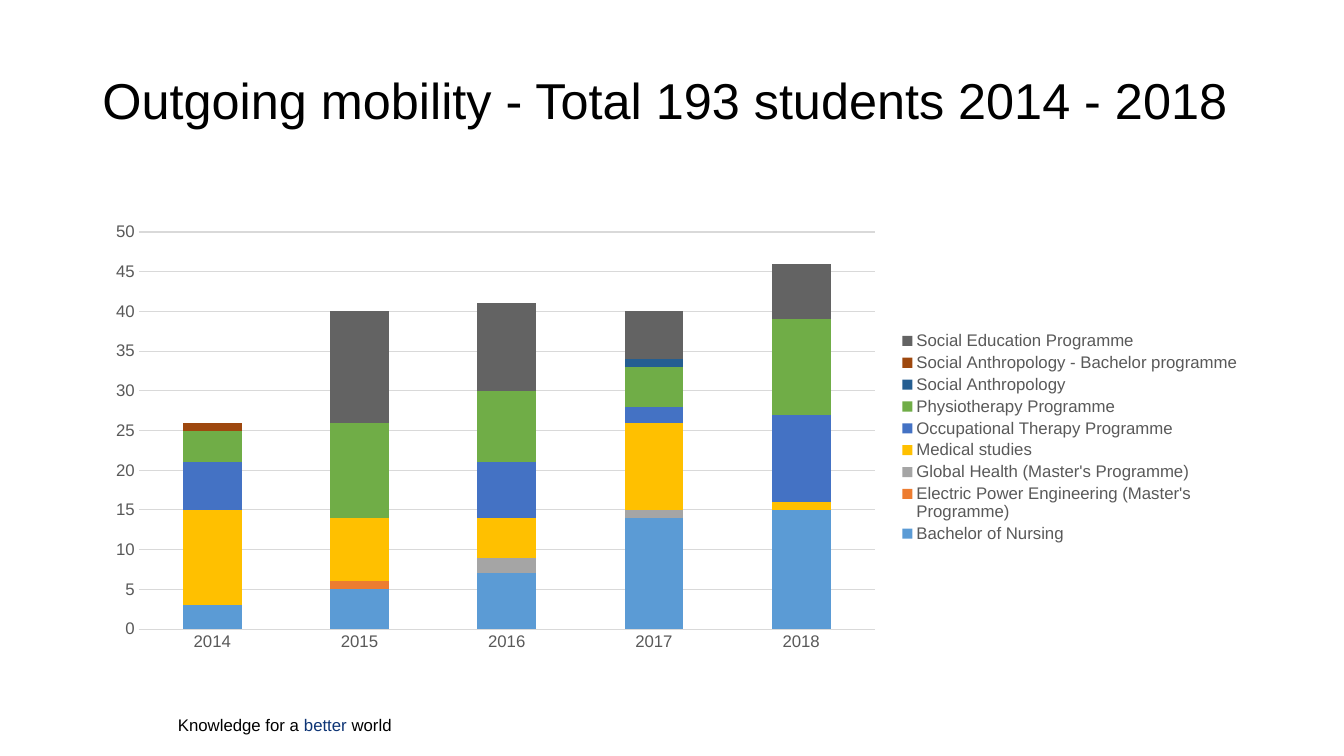
from lxml.etree import SubElement
from pptx import Presentation
from pptx.chart.data import CategoryChartData
from pptx.dml.color import RGBColor
from pptx.enum.chart import XL_CHART_TYPE, XL_LEGEND_POSITION, XL_TICK_MARK
from pptx.enum.text import MSO_ANCHOR, PP_ALIGN
from pptx.oxml.ns import qn
from pptx.util import Pt

BLACK = RGBColor(0x00, 0x00, 0x00)
NAVY = RGBColor(0x0D, 0x34, 0x75)
GREY_TEXT = RGBColor(0x59, 0x59, 0x59)
GREY_LINE = RGBColor(0xD9, 0xD9, 0xD9)
BLUE = RGBColor(0x5B, 0x9B, 0xD5)
ORANGE = RGBColor(0xED, 0x7D, 0x31)
GREY = RGBColor(0xA5, 0xA5, 0xA5)
GOLD = RGBColor(0xFF, 0xC0, 0x00)
INDIGO = RGBColor(0x44, 0x72, 0xC4)
GREEN = RGBColor(0x70, 0xAD, 0x47)
DARK_BLUE = RGBColor(0x25, 0x5E, 0x91)
BROWN = RGBColor(0x9E, 0x48, 0x0E)
DARK_GREY = RGBColor(0x63, 0x63, 0x63)

YEARS = ["2014", "2015", "2016", "2017", "2018"]
PROGRAMMES = [
    ("Bachelor of Nursing", BLUE, [3, 5, 7, 14, 15]),
    ("Electric Power Engineering (Master's Programme)", ORANGE, [None, 1, None, None, None]),
    ("Global Health (Master's Programme)", GREY, [None, None, 2, 1, None]),
    ("Medical studies", GOLD, [12, 8, 5, 11, 1]),
    ("Occupational Therapy Programme", INDIGO, [6, None, 7, 2, 11]),
    ("Physiotherapy Programme", GREEN, [4, 12, 9, 5, 12]),
    ("Social Anthropology", DARK_BLUE, [None, None, None, 1, None]),
    ("Social Anthropology - Bachelor programme", BROWN, [1, None, None, None, None]),
    ("Social Education Programme", DARK_GREY, [None, 14, 11, 6, 7]),
]


class SlideBuilder:
    """Holds the deck style and the current slide, and adds elements to it."""

    scale = 9525
    font_name = "Arial"

    def __init__(self, width, height):
        self.deck = Presentation()
        self.deck.slide_width, self.deck.slide_height = self.emu(width, height)
        self.page = self.deck.slides.add_slide(self.deck.slide_layouts[5])

    def emu(self, *lengths):
        return [length * self.scale for length in lengths]

    def style(self, font, size, color):
        font.name = self.font_name
        font.size = Pt(size)
        font.color.rgb = color

    def title(self, text, *place):
        box = self.page.shapes.title
        box.left, box.top, box.width, box.height = self.emu(*place)
        box.text_frame.text = text
        box.text_frame.vertical_anchor = MSO_ANCHOR.MIDDLE
        para = box.text_frame.paragraphs[0]
        para.alignment = PP_ALIGN.LEFT
        para.line_spacing = 0.9
        self.style(para.font, 36, BLACK)

    def tagline(self, spans, *place):
        box = self.page.shapes.add_textbox(*self.emu(*place))
        box.text_frame.word_wrap = True
        para = box.text_frame.paragraphs[0]
        for text, color in spans:
            span = para.add_run()
            span.text = text
            self.style(span.font, 12, color)

    def grey_line(self, line):
        line.color.rgb = GREY_LINE
        line.width = Pt(0.75)

    def stacked_chart(self, categories, rows, *place):
        data = CategoryChartData()
        data.categories = categories
        for name, _, values in rows:
            data.add_series(name, values)
        chart = self.page.shapes.add_chart(
            XL_CHART_TYPE.COLUMN_STACKED, *self.emu(*place), data).chart
        chart.has_title = False
        self.style(chart.font, 12, GREY_TEXT)
        plot = chart.plots[0]
        plot.vary_by_categories = False
        plot.gap_width = 150
        plot.overlap = 100
        for series, (_, color, _) in zip(plot.series, rows):
            series.format.fill.solid()
            series.format.fill.fore_color.rgb = color
        for axis in (chart.category_axis, chart.value_axis):
            axis.major_tick_mark = axis.minor_tick_mark = XL_TICK_MARK.NONE
            self.style(axis.tick_labels.font, 12, GREY_TEXT)
        self.grey_line(chart.category_axis.format.line)
        self.grey_line(chart.value_axis.major_gridlines.format.line)
        chart.value_axis.format.line.fill.background()
        chart.value_axis.minimum_scale = 0
        chart.value_axis.maximum_scale = 50
        chart.value_axis.major_unit = 5
        chart.has_legend = True
        chart.legend.position = XL_LEGEND_POSITION.RIGHT
        chart.legend.include_in_layout = False
        self.style(chart.legend.font, 12, GREY_TEXT)
        self.place_plot(chart, x=0.04, y=0.04, w=0.635, h=0.89)

    def place_plot(self, chart, **shares):
        area = chart.plots[0]._element.getparent()
        for old in area.findall(qn("c:layout")):
            area.remove(old)
        layout = SubElement(area, qn("c:layout"))
        area.insert(0, layout)
        manual = SubElement(layout, qn("c:manualLayout"))
        settings = {"layoutTarget": "inner", "xMode": "edge", "yMode": "edge", **shares}
        for tag, value in settings.items():
            SubElement(manual, qn(f"c:{tag}")).set("val", str(value))


def main():
    builder = SlideBuilder(1280, 720)
    builder.tagline([("Knowledge for a ", BLACK), ("better ", NAVY), ("world", BLACK)],
                    160, 676, 236, 29)
    builder.title("Outgoing mobility - Total 193 students 2014 - 2018", 88, 29, 1154, 139)
    builder.stacked_chart(YEARS, PROGRAMMES, 88, 204, 1104, 425)
    builder.deck.save("out.pptx")


if __name__ == "__main__":
    main()
